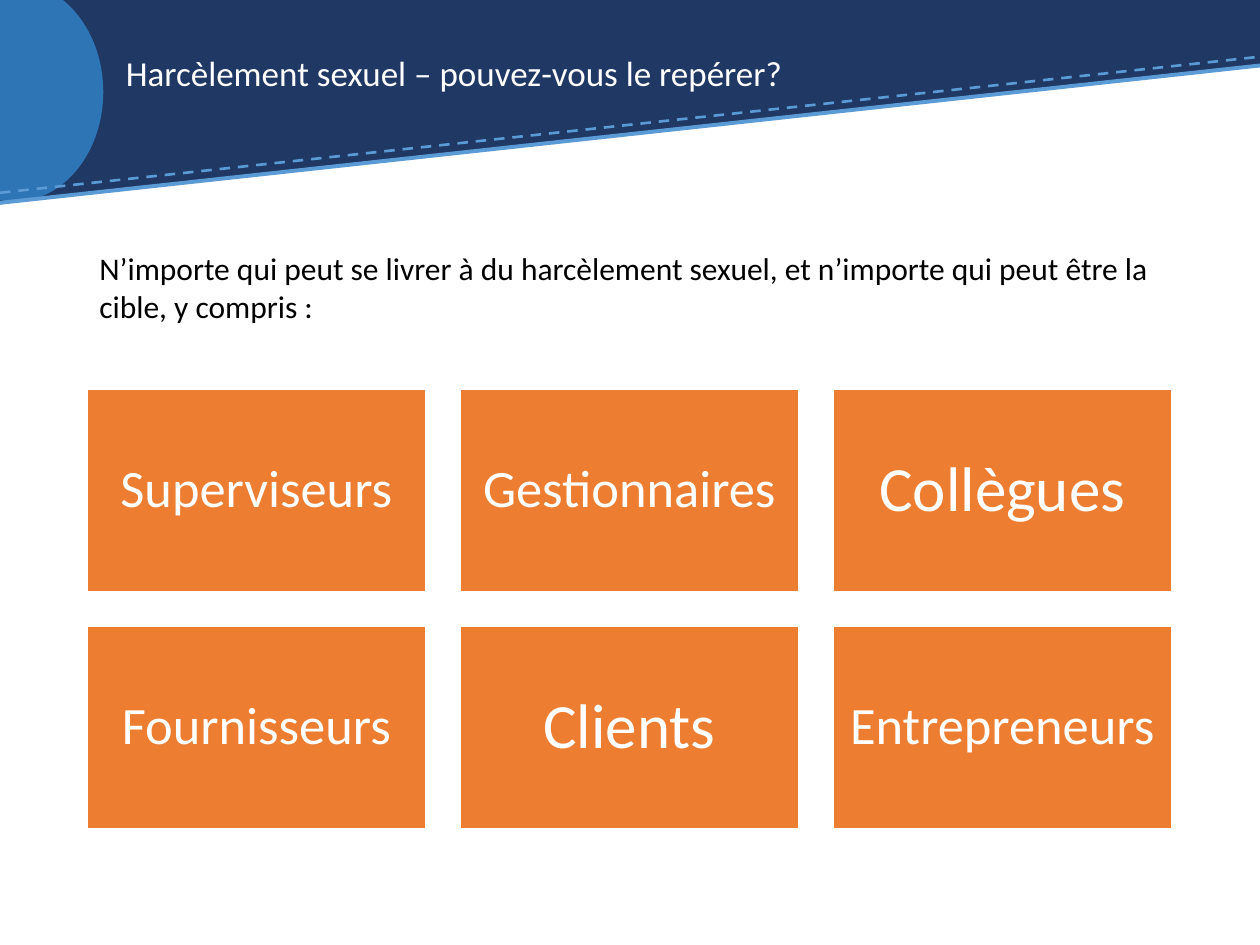
from pptx import Presentation
from pptx.dml.color import RGBColor
from pptx.enum.dml import MSO_LINE
from pptx.enum.shapes import MSO_CONNECTOR, MSO_SHAPE
from pptx.enum.text import MSO_ANCHOR, PP_ALIGN
from pptx.oxml.ns import qn
from pptx.util import Inches, Pt
from lxml import etree

RECT, OVAL = MSO_SHAPE.RECTANGLE, MSO_SHAPE.OVAL
WEDGE = MSO_SHAPE.RIGHT_TRIANGLE
STRAIGHT, DASH = MSO_CONNECTOR.STRAIGHT, MSO_LINE.DASH
MIDDLE, CENTER = MSO_ANCHOR.MIDDLE, PP_ALIGN.CENTER
FONT = "Calibri"
COLORS = {
    "navy": "203864",
    "blue": "2E75B6",
    "sky": "5B9BD5",
    "orange": "ED7D31",
    "white": "FFFFFF",
    "black": "000000",
}
RGB = {name: RGBColor.from_string(code) for name, code in COLORS.items()}

deck = Presentation()
deck.slide_width, deck.slide_height = Inches(10), Inches(7.5)
slide = deck.slides.add_slide(deck.slide_layouts[6])
shapes = slide.shapes


def add_block(kind, box, color):
    """Add a filled preset shape without outline or shadow."""
    block = shapes.add_shape(kind, *map(Inches, box))
    block.shadow.inherit = False
    block.fill.solid()
    block.fill.fore_color.rgb = RGB[color]
    block.line.fill.background()
    return block


def add_words(shape, words, size, color):
    """Write one wrapped run into the shape and return its paragraph."""
    shape.text_frame.word_wrap = True
    para = shape.text_frame.paragraphs[0]
    run = para.add_run()
    run.text = words
    run.font.name, run.font.size = FONT, Pt(size)
    run.font.color.rgb = RGB[color]
    return para


# Slanted header band
add_block(RECT, (0, 0, 10, 0.52), "navy")
wedge = add_block(WEDGE, (0, 0.51, 10, 1.09), "navy")
wedge.element.spPr.find(qn("a:xfrm")).set("flipV", "1")
add_block(OVAL, (-0.59, -0.14, 1.41, 1.74), "blue")

for start, end, width, dash in [(1.53, 0.45, 1.5, DASH), (1.61, 0.52, 2.25, None)]:
    edge = shapes.add_connector(
        STRAIGHT, Inches(0), Inches(start), Inches(10), Inches(end))
    edge.line.color.rgb = RGB["sky"]
    edge.line.width = Pt(width)
    edge.line.dash_style = dash
    etree.SubElement(edge.element.spPr, qn("a:effectLst"))

title = shapes.add_textbox(Inches(0.9), Inches(0.2), Inches(8.07), Inches(0.8))
title.text_frame.vertical_anchor = MIDDLE
para = add_words(title, "Harcèlement sexuel – pouvez-vous le repérer?", 20, "white")
para.line_spacing = 0.9

# Cards, three to a row
LEFT, TOP, WIDE, HIGH = 0.69, 3.09, 2.69, 1.61
GAP = 0.27
cards = [
    ("Superviseurs", 30), ("Gestionnaires", 30), ("Collègues", 36),
    ("Fournisseurs", 30), ("Clients", 36), ("Entrepreneurs", 30),
]
for i, (label, size) in enumerate(cards):
    row, col = divmod(i, 3)
    x, y = LEFT + col * (WIDE + GAP), TOP + row * (HIGH + GAP)
    card = add_block(RECT, (x, y, WIDE, HIGH), "orange")
    card.line.color.rgb = RGB["white"]
    card.line.width = Pt(1)
    frame = card.text_frame
    frame.vertical_anchor = MIDDLE
    inset = Inches(0.15 if size == 36 else 0.12)
    frame.margin_left = frame.margin_right = inset
    frame.margin_top = frame.margin_bottom = inset
    para = add_words(card, label, size, "white")
    para.alignment, para.line_spacing = CENTER, 0.9

intro = shapes.add_textbox(Inches(LEFT), Inches(1.93), Inches(9.06), Inches(0.7))
add_words(
    intro,
    "N’importe qui peut se livrer à du harcèlement sexuel, "
    "et n’importe qui peut être la cible, y compris :",
    18, "black")

deck.save("out.pptx")
